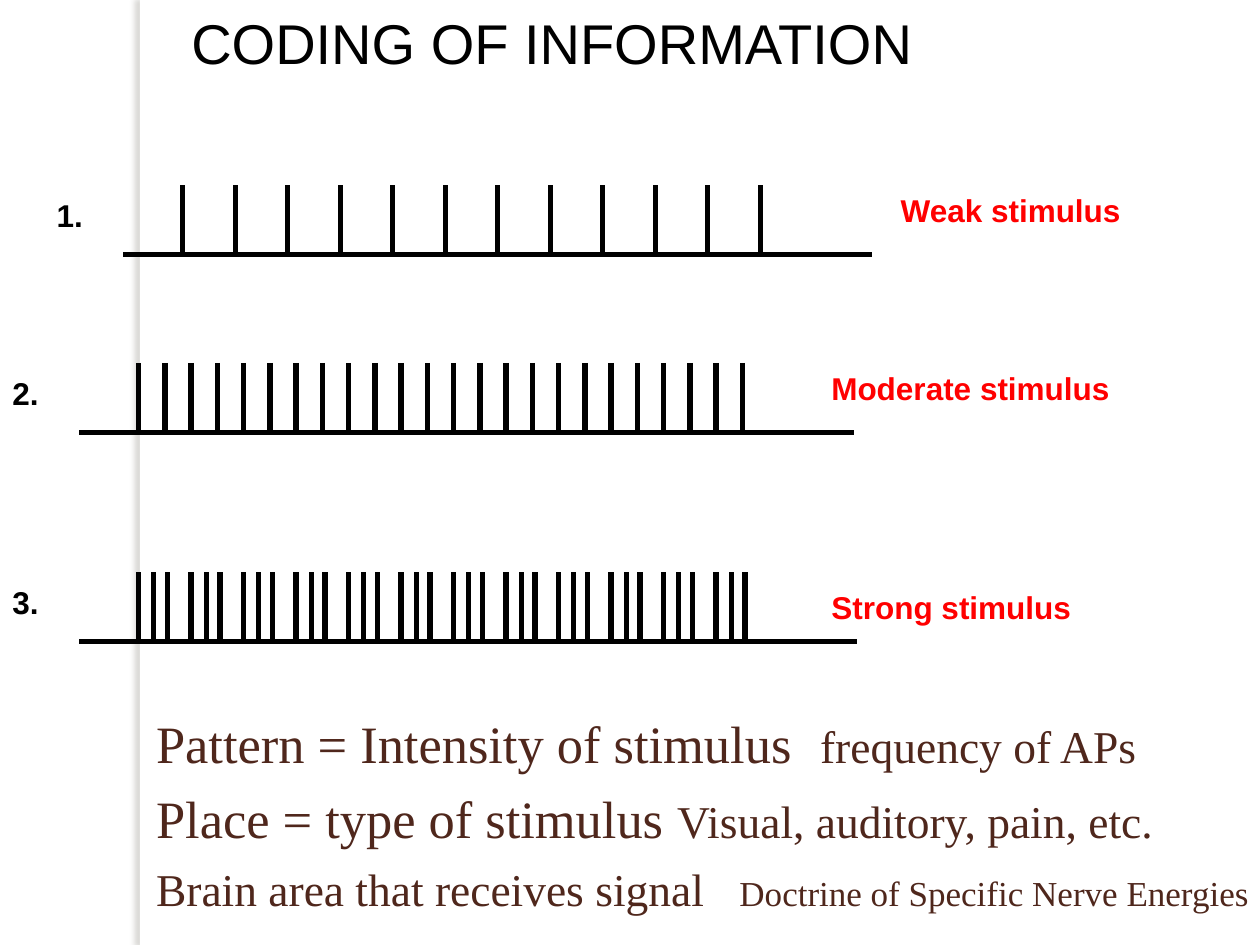
from dataclasses import dataclass

from lxml.etree import SubElement
from pptx import Presentation
from pptx.dml.color import RGBColor
from pptx.enum.shapes import MSO_CONNECTOR, MSO_SHAPE
from pptx.oxml.ns import qn
from pptx.util import Inches, Pt


@dataclass(frozen=True)
class Theme:
    white: str = "FFFFFF"
    ink: str = "000000"
    accent: str = "FF0000"
    brown: str = "4F271C"
    shade: str = "736F63"
    sans: str = "Arial"
    serif: str = "Times New Roman"
    title: int = 32
    large: int = 30
    medium: int = 26
    small: int = 20
    label: int = 18
    stroke: int = 3


THEME = Theme()

SPIKES = 12
SPIKE_STEP = 5 / 12
SPIKE_HEIGHT = 0.53
SPIKE_INSET = 1.1
BASE_INSET = 0.63
BASE_WIDTH = 5.94
BASE_DROP = 0.55

# train box (left, top), spike offsets, number, caption, caption place
TRAINS = [
    ((0.35, 1.47), (0,), "1.", "Weak stimulus", (7.05, 1.47, 1.96, 0.4)),
    ((0, 2.88), (0, 0.21), "2.", "Moderate stimulus", (6.5, 2.88, 2.43, 0.4)),
    ((0, 4.54), (0, 0.12, 0.23), "3.", "Strong stimulus", (6.5, 4.62, 2.12, 0.4)),
]

# runs as (text, size), then the tab stop that sets the second run apart
SUMMARY = [
    ([("Pattern = Intensity of stimulus\t", THEME.large),
      ("frequency of APs", THEME.medium)], 5.27),
    ([("Place = type of stimulus ", THEME.large),
      ("Visual, auditory, pain, etc.", THEME.medium)], None),
    ([("Brain area that receives signal\t", THEME.medium),
      ("Doctrine of Specific Nerve Energies", THEME.small)], 4.63),
]


def add_run(p, text, size, font=THEME.sans, color=THEME.ink, bold=False):
    r = p.add_run()
    r.text = text
    r.font.name = font
    r.font.size = Pt(size)
    r.font.bold = bold
    r.font.color.rgb = RGBColor.from_string(color)


def add_frame(shapes, box, wrap=False):
    tf = shapes.add_textbox(*map(Inches, box)).text_frame
    tf.word_wrap = wrap
    return tf


def add_text(shapes, box, text, wrap=False, **style):
    add_run(add_frame(shapes, box, wrap).paragraphs[0], text, **style)


def add_line(shapes, x1, y1, x2, y2):
    line = shapes.add_connector(MSO_CONNECTOR.STRAIGHT, *map(Inches, (x1, y1, x2, y2)))
    line.line.color.rgb = RGBColor.from_string(THEME.ink)
    line.line.width = Pt(THEME.stroke)
    SubElement(line._element.spPr, qn("a:effectLst"))


def add_side_strip(shapes, box):
    """White strip that casts a soft shadow to its left."""
    sp = shapes.add_shape(MSO_SHAPE.RECTANGLE, *map(Inches, box))
    sp.fill.solid()
    sp.fill.fore_color.rgb = RGBColor.from_string(THEME.white)
    sp.line.fill.background()
    effects = SubElement(sp._element.spPr, qn("a:effectLst"))
    shadow = SubElement(effects, qn("a:outerShdw"), blurRad=str(Pt(3)),
                        dist=str(Pt(3)), dir="10800000", rotWithShape="0")
    color = SubElement(shadow, qn("a:srgbClr"), val=THEME.shade)
    SubElement(color, qn("a:alpha"), val="25000")


def add_spike_train(shapes, left, top, offsets, number):
    """One numbered recording; each offset adds a baseline with its spikes."""
    group = shapes.add_group_shape().shapes
    add_text(group, (left, top + 0.04, 0.48, 0.5), number, size=THEME.label, bold=True)
    for offset in offsets:
        base_x, base_y = left + BASE_INSET + offset, top + BASE_DROP
        add_line(group, base_x, base_y, base_x + BASE_WIDTH, base_y)
        for i in range(SPIKES):
            x = left + SPIKE_INSET + offset + i * SPIKE_STEP
            add_line(group, x, top, x, top + SPIKE_HEIGHT)


def add_summary(shapes, box):
    tf = add_frame(shapes, box, wrap=True)
    for i, (runs, tab) in enumerate(SUMMARY):
        p = tf.paragraphs[0] if i == 0 else tf.add_paragraph()
        p.space_before = Pt(7)
        if tab:
            tabs = SubElement(p._p.get_or_add_pPr(), qn("a:tabLst"))
            SubElement(tabs, qn("a:tab"), pos=str(Inches(tab)), algn="l")
        for text, size in runs:
            add_run(p, text, size, font=THEME.serif, color=THEME.brown)


def main():
    prs = Presentation()
    prs.slide_width, prs.slide_height = Inches(10), Inches(7.5)
    s = prs.slides.add_slide(prs.slide_layouts[6])
    add_side_strip(s.shapes, (1.11, 0, 0.08, 7.5))
    add_text(s.shapes, (1.42, 0.02, 10.24, 0.6), "CODING OF INFORMATION",
             wrap=True, size=THEME.title)
    for (left, top), offsets, number, caption, caption_box in TRAINS:
        add_spike_train(s.shapes, left, top, offsets, number)
        add_text(s.shapes, caption_box, caption, size=THEME.label,
                 color=THEME.accent, bold=True)
    add_summary(s.shapes, (1.14, 5.59, 13.59, 3.82))
    prs.save("out.pptx")


if __name__ == "__main__":
    main()
